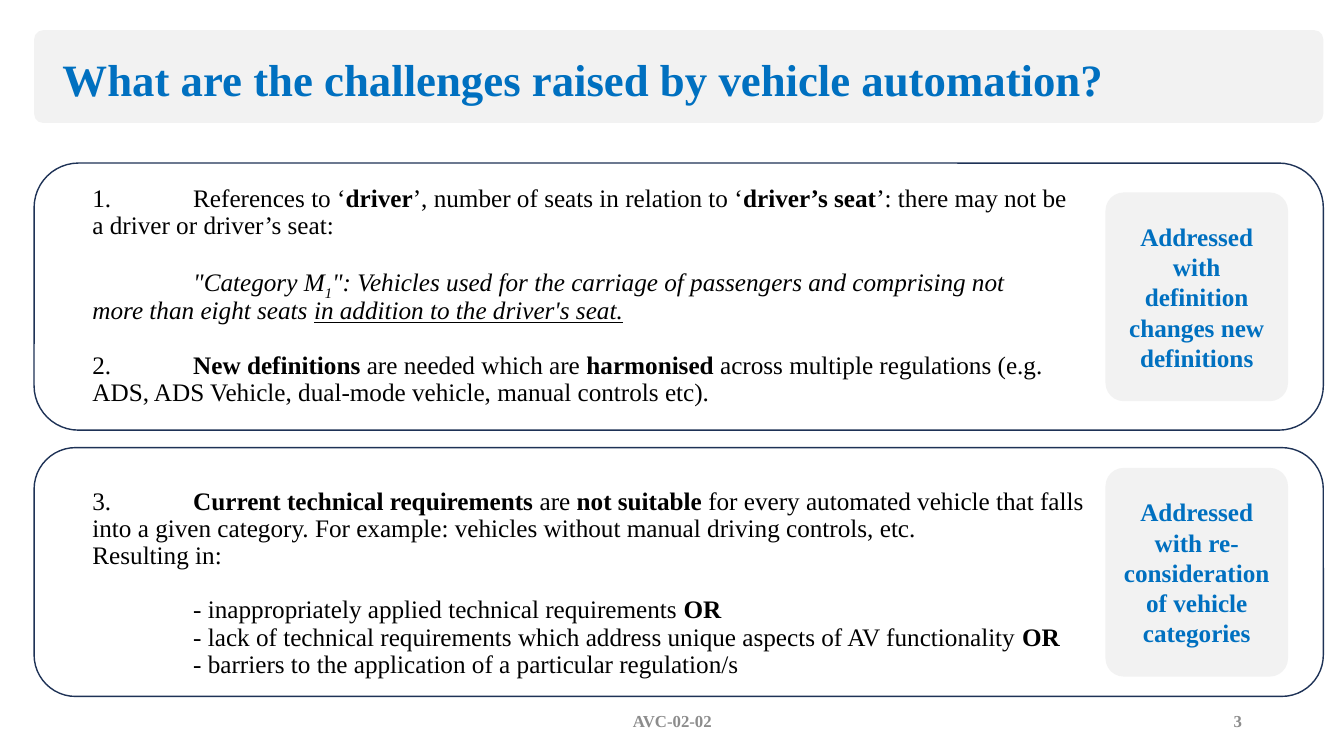
from dataclasses import dataclass

from lxml import etree
from pptx import Presentation
from pptx.dml.color import RGBColor as RGB
from pptx.enum.shapes import MSO_SHAPE as Shape
from pptx.enum.text import MSO_ANCHOR as Anchor, PP_ALIGN as Align
from pptx.oxml.ns import qn
from pptx.util import Cm, Pt


@dataclass(frozen=True)
class Theme:
    face: str = "Times New Roman"
    blue: str = "0070C0"
    navy: str = "1E3256"
    pale: str = "F2F2F2"
    grey: str = "8C8C8C"
    black: str = "000000"
    head: int = 32
    body: int = 18
    foot: int = 12
    lead: float = 0.9
    tab: float = 2.54


class Deck:
    def __init__(self, theme):
        self.theme = theme
        self.prs = Presentation()
        self.prs.slide_width, self.prs.slide_height = Cm(33.87), Cm(19.05)
        self.slide = self.prs.slides.add_slide(self.prs.slide_layouts[5])

    def style(self, para, size, color, bold=False, align=Align.LEFT):
        para.alignment = align
        font = para.font
        font.name, font.size, font.bold = self.theme.face, Pt(size), bold
        font.color.rgb = RGB.from_string(color)

    def panel(self, box, fill=None, line=None, curve=None):
        shape = self.slide.shapes.add_shape(Shape.ROUNDED_RECTANGLE, *map(Cm, box))
        shape.shadow.inherit = False
        if curve is not None:
            shape.adjustments[0] = curve
        if fill:
            shape.fill.solid()
            shape.fill.fore_color.rgb = RGB.from_string(fill)
        else:
            shape.fill.background()
        if line:
            shape.line.color.rgb = RGB.from_string(line)
            shape.line.width = Pt(1)
        else:
            shape.line.fill.background()
        return shape

    def title(self, text, box):
        """Fill the title placeholder and bring it in front of its banner."""
        shape = self.slide.shapes.title
        shape.left, shape.top, shape.width, shape.height = map(Cm, box)
        frame = shape.text_frame
        frame.text = text
        frame.word_wrap, frame.vertical_anchor = True, Anchor.BOTTOM
        para = frame.paragraphs[0]
        para.line_spacing = self.theme.lead
        self.style(para, self.theme.head, self.theme.blue, True)
        shape.element.getparent().append(shape.element)

    def callout(self, text, box):
        frame = self.panel(box, self.theme.pale, curve=0.1).text_frame
        frame.text = text
        frame.word_wrap, frame.vertical_anchor = True, Anchor.MIDDLE
        self.style(frame.paragraphs[0], self.theme.body, self.theme.blue,
                   True, Align.CENTER)

    def label(self, text, box, align):
        frame = self.slide.shapes.add_textbox(*map(Cm, box)).text_frame
        frame.text = text
        frame.word_wrap, frame.vertical_anchor = True, Anchor.MIDDLE
        self.style(frame.paragraphs[0], self.theme.foot, self.theme.grey, True, align)

    def body(self, items, box):
        """Lay out (space before, runs) items; a run is (text, style letters)."""
        frame = self.slide.shapes.add_textbox(*map(Cm, box)).text_frame
        frame.word_wrap = True
        for num, (gap, runs) in enumerate(items):
            para = frame.add_paragraph() if num else frame.paragraphs[0]
            para.line_spacing, para.space_before = self.theme.lead, Pt(gap)
            tabs = etree.SubElement(para._p.get_or_add_pPr(), qn("a:tabLst"))
            etree.SubElement(tabs, qn("a:tab"), pos=str(Cm(self.theme.tab)), algn="l")
            self.style(para, self.theme.body, self.theme.black)
            for text, marks in runs:
                self.add_text(para, text, marks)

    def add_text(self, para, text, marks):
        """Marks: b bold, i italic, u underlined, s subscript; \\n breaks the line."""
        for num, part in enumerate(text.split("\n")):
            if num:
                para.add_line_break()
            run = para.add_run()
            run.text = part
            if "b" in marks:
                run.font.bold = True
            if "i" in marks:
                run.font.italic = True
            if "u" in marks:
                run.font.underline = True
            if "s" in marks:
                run.font._element.set("baseline", "-25000")


LINE = 19.4  # height of one body line in points
POINTS = [
    (0, [("1.\tReferences to ‘", ""), ("driver", "b"),
         ("’, number of seats in relation to ‘", ""), ("driver’s seat", "b"),
         ("’: there may not be\na driver or driver’s seat:", "")]),
    (LINE, [("\t\"Category M", "i"), ("1", "is"),
            ("\": Vehicles used for the carriage of passengers and comprising not\n"
             "more than eight seats ", "i"),
            ("in addition to the driver's seat.", "iu")]),
    (LINE, [("2.\t", ""), ("New definitions", "b"), (" are needed which are ", ""),
            ("harmonised", "b"),
            (" across multiple regulations (e.g.\n"
             "ADS, ADS Vehicle, dual-mode vehicle, manual controls etc).", "")]),
    (3 * LINE, [("3.\t", ""), ("Current technical requirements", "b"), (" are ", ""),
                ("not suitable", "b"),
                (" for every automated vehicle that falls\ninto a given category. "
                 "For example: vehicles without manual driving controls, etc.", "")]),
    (0, [("Resulting in:", "")]),
    (LINE, [("\t- inappropriately applied technical requirements ", ""), ("OR", "b")]),
    (0, [("\t- lack of technical requirements which address unique aspects "
          "of AV functionality ", ""), ("OR", "b")]),
    (0, [("\t- barriers to the application of a particular regulation/s", "")]),
]
ROWS = [  # frame top, frame height, callout top, callout text
    (4.11, 6.73, 4.85, "Addressed with definition changes new definitions"),
    (11.28, 6.27, 11.79, "Addressed with re-consideration of vehicle categories"),
]


def main():
    theme = Theme()
    deck = Deck(theme)
    left, width = 0.86, 32.49
    deck.panel((left, 0.76, width, 2.34), theme.pale, curve=0.1)
    deck.title("What are the challenges raised by vehicle automation?",
               (1.32, 1.5, 29.41, 1.3))
    for top, high, y, text in ROWS:
        deck.panel((left, top, width, high), line=theme.navy)
        deck.callout(text, (27.86, y, 4.6, 5.26))
    deck.body(POINTS, (2.08, 4.55, 25.78, 14.63))
    deck.label("AVC-02-02", (11.23, 17.65, 11.43, 1.02), Align.CENTER)
    deck.label("3", (23.93, 17.65, 7.62, 1.02), Align.RIGHT)
    deck.prs.save("out.pptx")


if __name__ == "__main__":
    main()
